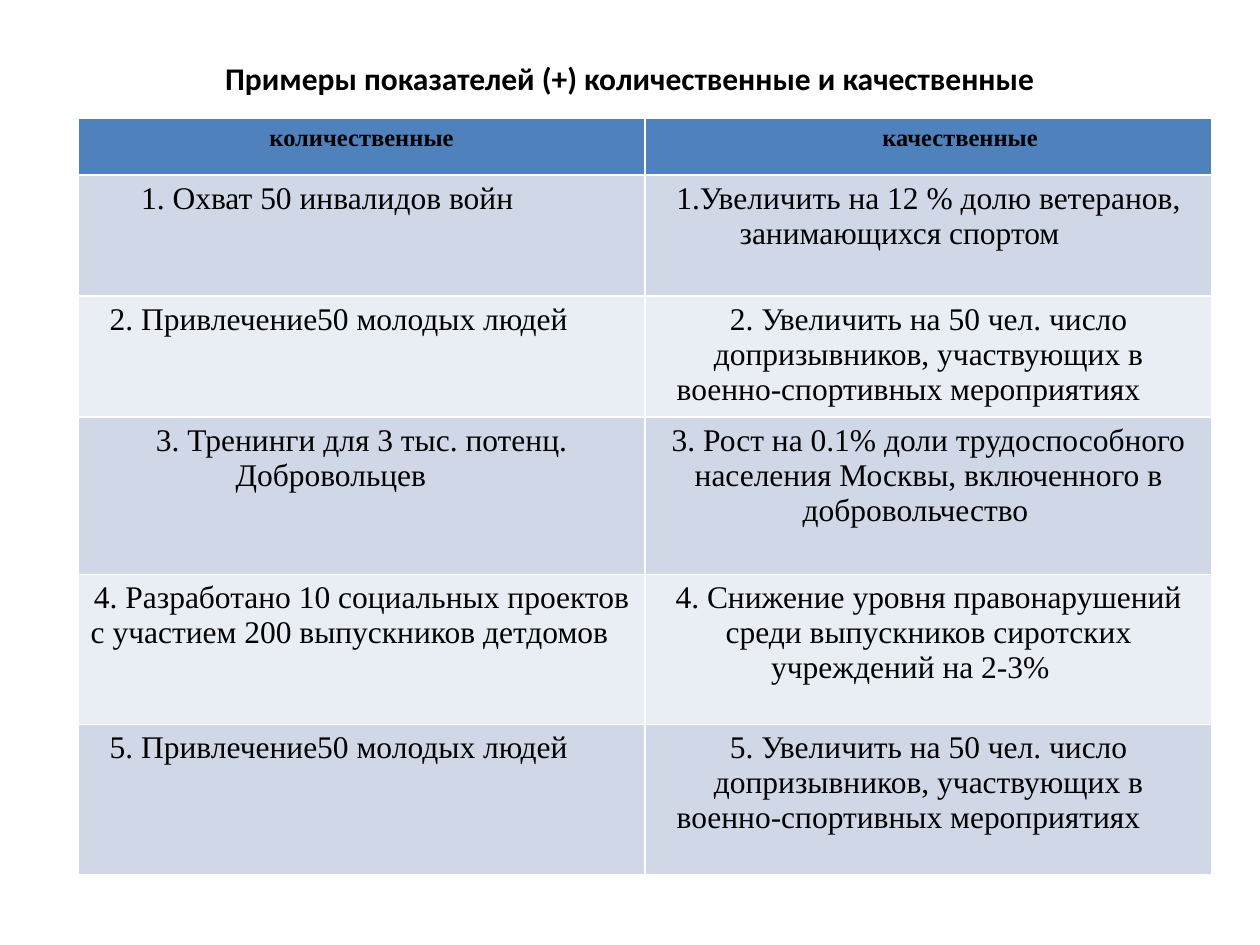
from pptx import Presentation
from pptx.dml.color import RGBColor
from pptx.enum import text
from pptx.util import Inches, Pt

COLORS = {"text": "000000", "header": "4F81BD", "odd": "D0D8E8", "even": "E9EDF4"}
TITLE = "Примеры показателей (+) количественные и качественные"
ROW_HEIGHTS = [0.45, 0.96, 0.96, 1.25, 1.19, 1.19]
INDICATORS = [
    ("количественные", "\tкачественные"),
    ("1. Охват 50 инвалидов войн \t",
     "1.Увеличить на 12 % долю ветеранов, занимающихся спортом\t"),
    ("2. Привлечение50 молодых людей\t",
     "2. Увеличить на 50 чел. число допризывников, участвующих в военно-спортивных мероприятиях\t"),
    ("3. Тренинги для 3 тыс. потенц. Добровольцев\t",
     "3. Рост на 0.1% доли трудоспособного населения Москвы, включенного в добровольчество\t"),
    ("4. Разработано 10 социальных проектов с участием 200 выпускников детдомов\t",
     "4. Снижение уровня правонарушений среди выпускников сиротских учреждений на 2-3%\t"),
    ("5. Привлечение50 молодых людей\t",
     "5. Увеличить на 50 чел. число допризывников, участвующих в военно-спортивных мероприятиях\t"),
]


def format_paragraph(paragraph, font_name, size, bold):
    """Centre a paragraph and set its font."""
    paragraph.alignment = text.PP_ALIGN.CENTER
    font = paragraph.font
    font.name, font.size, font.bold = font_name, Pt(size), bold
    font.color.rgb = RGBColor.from_string(COLORS["text"])


def set_title(slide):
    """Place and format the title placeholder."""
    title = slide.shapes.title
    title.left, title.top = Inches(0.5), Inches(0.3)
    title.width, title.height = Inches(9), Inches(0.64)
    title.text_frame.text = TITLE
    title.text_frame.vertical_anchor = text.MSO_ANCHOR.MIDDLE
    format_paragraph(title.text_frame.paragraphs[0], "Calibri", 18, True)


def fill_cell(cell, content, color, size, bold):
    """Write one table cell and colour it."""
    cell.text = content
    cell.fill.solid()
    cell.fill.fore_color.rgb = RGBColor.from_string(color)
    format_paragraph(cell.text_frame.paragraphs[0], "Times New Roman", size, bold)


def add_indicator_table(slide):
    """Add the table of quantitative and qualitative indicators."""
    frame = slide.shapes.add_table(
        len(INDICATORS), 2, Inches(0.62), Inches(0.94), Inches(9), Inches(sum(ROW_HEIGHTS)))
    table = frame.table
    for index, (height, contents) in enumerate(zip(ROW_HEIGHTS, INDICATORS)):
        table.rows[index].height = Inches(height)
        is_header = index == 0
        color = COLORS["header" if is_header else "odd" if index % 2 else "even"]
        for column, content in enumerate(contents):
            fill_cell(table.cell(index, column), content, color, 14 if is_header else 18, is_header)


def main():
    """Build the slide and save it."""
    presentation = Presentation()
    presentation.slide_width, presentation.slide_height = Inches(10), Inches(7.5)
    slide = presentation.slides.add_slide(presentation.slide_layouts[5])
    set_title(slide)
    add_indicator_table(slide)
    presentation.save("out.pptx")


if __name__ == "__main__":
    main()
